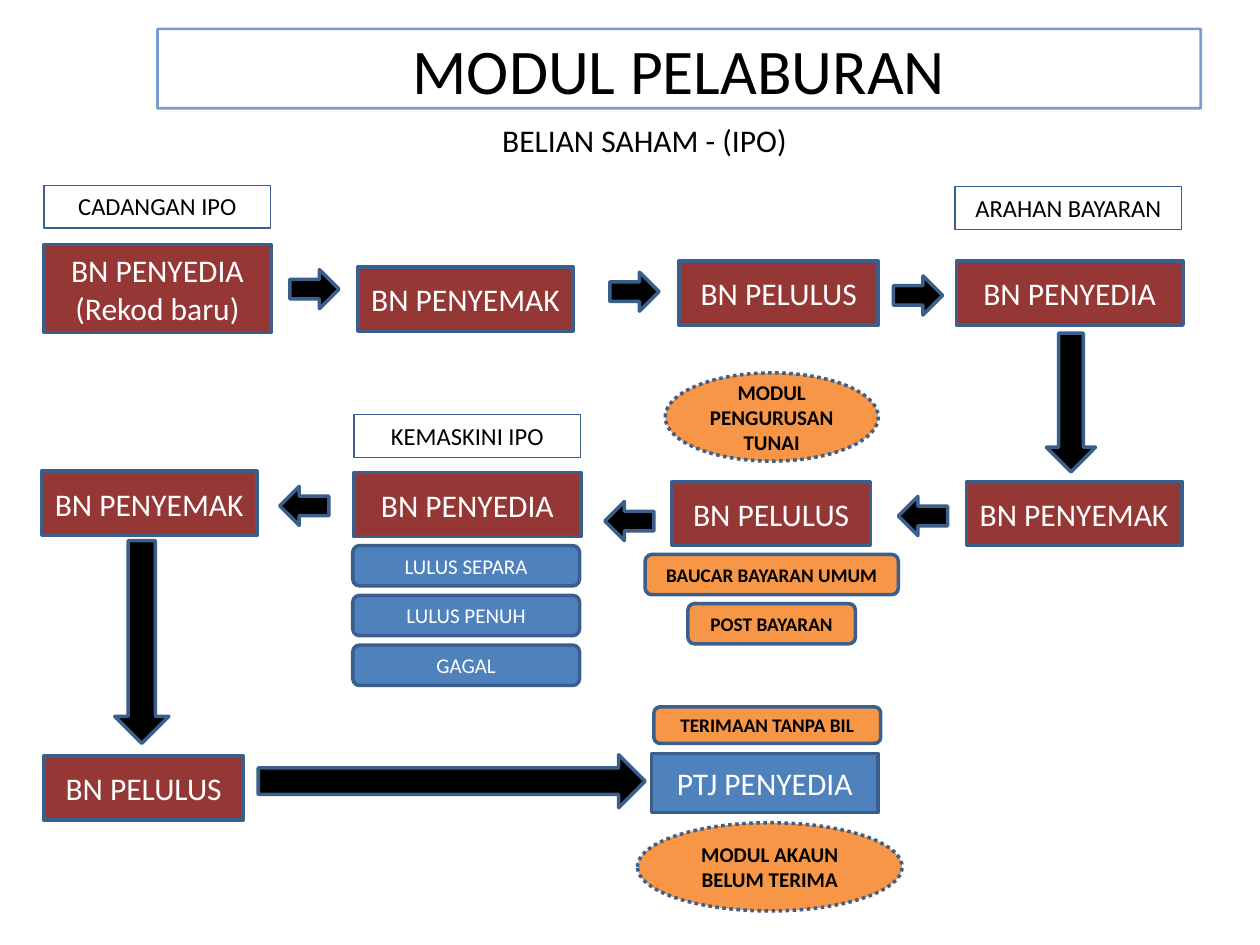
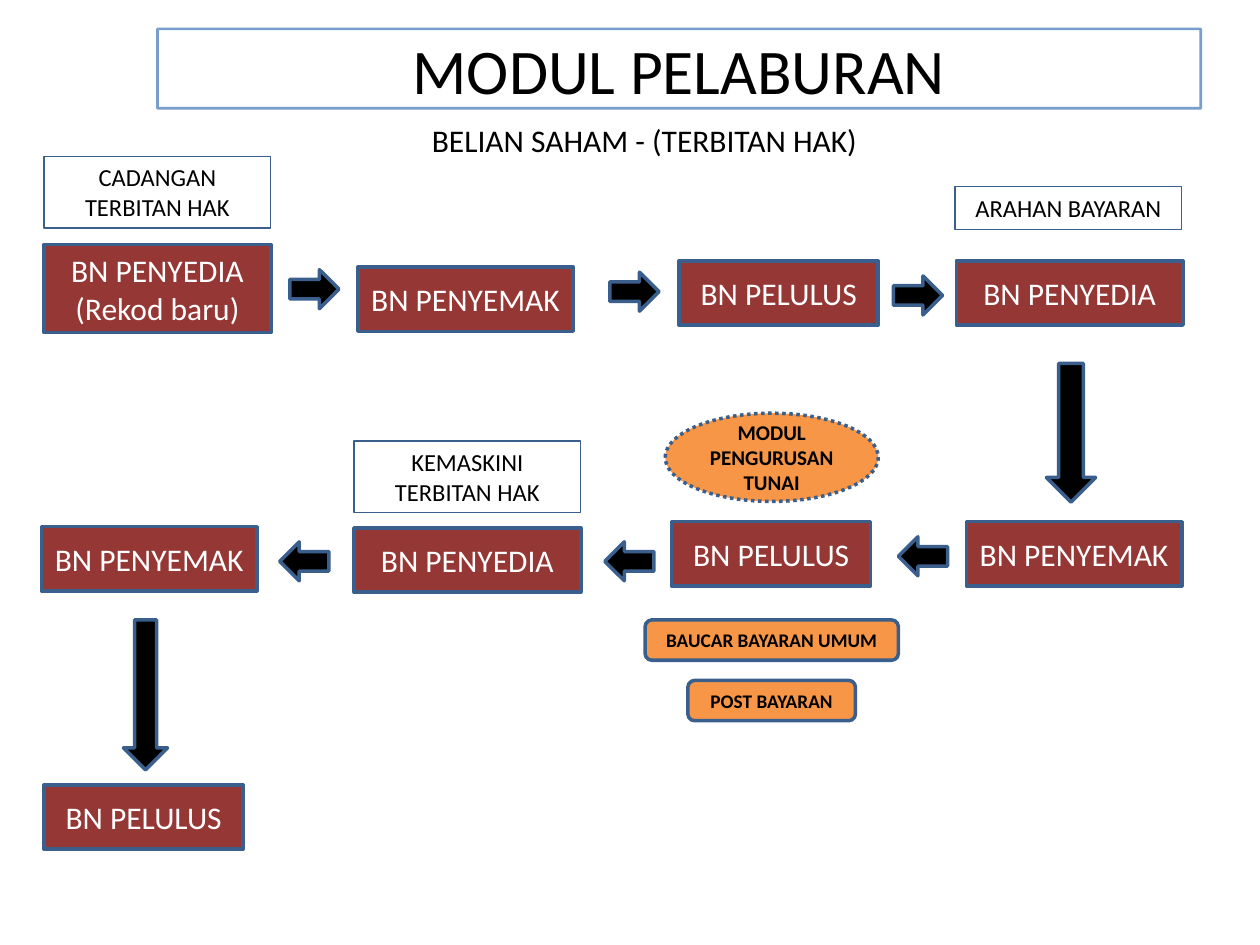
"""Build two flow slides on share purchases in an investment module."""
from dataclasses import dataclass

from lxml import etree
from pptx import Presentation
from pptx.dml.color import RGBColor
from pptx.enum.dml import MSO_LINE
from pptx.enum.shapes import MSO_SHAPE
from pptx.enum.text import MSO_ANCHOR, MSO_AUTO_SIZE, PP_ALIGN
from pptx.oxml.ns import qn
from pptx.util import Inches, Pt

WIDE, HIGH = Inches(10), Inches(7.5)
COL, ROW = WIDE / 100, HIGH / 75
FONT = "Calibri"

BLACK = RGBColor(0x00, 0x00, 0x00)
WHITE = RGBColor(0xFF, 0xFF, 0xFF)
RED = RGBColor(0x95, 0x37, 0x35)
BLUE = RGBColor(0x4F, 0x81, 0xBD)
NAVY = RGBColor(0x3A, 0x5F, 0x8C)
AMBER = RGBColor(0xF7, 0x96, 0x46)

RECT, ROUND = MSO_SHAPE.RECTANGLE, MSO_SHAPE.ROUNDED_RECTANGLE
CARD = MSO_SHAPE.FLOWCHART_ALTERNATE_PROCESS
OVAL, ARROW = MSO_SHAPE.OVAL, MSO_SHAPE.RIGHT_ARROW
DOTS = MSO_LINE.ROUND_DOT
CENTER = PP_ALIGN.CENTER
TOP, MIDDLE = MSO_ANCHOR.TOP, MSO_ANCHOR.MIDDLE
GROW = MSO_AUTO_SIZE.SHAPE_TO_FIT_TEXT

MAKER, CHECKER, PASSER = "BN PENYEDIA", "BN PENYEMAK", "BN PELULUS"
SPAN = {MAKER: 18, CHECKER: 17.1, PASSER: 15.8}
STEP_H, SLIP_H, OVAL_H = 5.1, 3.2, 7
RIGHT, DOWN, LEFT = 0, 90, 180


@dataclass
class Plan:
    """Wording and row positions that differ between the flows."""
    head: str
    topic: str
    lines: int
    drop: float
    pay: float
    fix: float
    slips: tuple
    fall: tuple
    end: float


def place(x, y, w, h):
    """Turn grid columns and rows into slide lengths."""
    return int(x * COL), int(y * ROW), int(w * COL), int(h * ROW)


def write(shape, lines, size, color, bold=False, anchor=MIDDLE):
    """Fill a shape with centred paragraphs."""
    frame = shape.text_frame
    frame.word_wrap = True
    frame.vertical_anchor = anchor
    for i, line in enumerate(lines):
        para = frame.add_paragraph() if i else frame.paragraphs[0]
        para.alignment = CENTER
        run = para.add_run()
        run.text = line
        run.font.name, run.font.size = FONT, Pt(size)
        run.font.bold = bold
        run.font.color.rgb = color


def draw(slide, kind, at, fill=None, edge=NAVY, width=2):
    """Add a flat shape with an outline and an optional fill."""
    shape = slide.shapes.add_shape(kind, *place(*at))
    shape.shadow.inherit = False
    if fill is None:
        shape.fill.background()
    else:
        shape.fill.solid()
        shape.fill.fore_color.rgb = fill
    shape.line.color.rgb = edge
    shape.line.width = Pt(width)
    return shape


def title(slide, head):
    """Add the framed title and the heading below it."""
    box = draw(slide, RECT, (12.5, 2.3, 82.8, 6.3), edge=BLUE, width=1.5)
    tint = box.line.color._xFill.find(qn("a:srgbClr"))
    etree.SubElement(tint, qn("a:alpha")).set("val", "76000")
    write(box, ["MODUL PELABURAN"], 36.3, BLACK)
    text = slide.shapes.add_textbox(*place(24.2, 9.1, 53.9, 4))
    write(text, [head], 18, BLACK, anchor=TOP)
    text.text_frame.auto_size = GROW


def label(slide, x, base, text, lines=1):
    """Add an outlined stage label that rests on a base row."""
    tall = 1.1 + 2.3 * lines
    box = draw(slide, RECT, (x, base - tall, 18, tall), width=0.75)
    write(box, [text], 14, BLACK, anchor=TOP)
    box.text_frame.auto_size = GROW


def step(slide, x, y, role, note=None):
    """Add a red step box, taller when it holds a note."""
    tall = 7 if note else STEP_H
    box = draw(slide, RECT, (x, y, SPAN[role], tall), RED)
    write(box, [role, note] if note else [role], 18, WHITE)


def slip(slide, x, y, w, text, h=SLIP_H):
    """Add an amber document slip."""
    write(draw(slide, ROUND, (x, y, w, h), AMBER), [text], 11, BLACK, True)


def module(slide, x, y, w, text):
    """Add a dotted oval for a linked module."""
    oval = draw(slide, OVAL, (x, y, w, OVAL_H), AMBER)
    oval.line.dash_style = DOTS
    write(oval, [text], 12, BLACK, True)


def arrow(slide, x, y, turn=RIGHT, w=3.9, h=3.1):
    """Add a black block arrow, turned about its centre."""
    draw(slide, ARROW, (x, y, w, h), BLACK).rotation = turn


def flow(deck, plan):
    """Add a slide with the shared flow and return it."""
    slide = deck.slides.add_slide(deck.slide_layouts[6])
    title(slide, plan.head)
    pay, fix = plan.pay, plan.fix

    label(slide, 3.5, 18.1, "CADANGAN " + plan.topic, plan.lines)
    label(slide, 75.8, 18.2, "ARAHAN BAYARAN")
    step(slide, 3.5, 19.4, MAKER, "(Rekod baru)")
    for x, y, role in ((28.4, 21.2, CHECKER), (53.9, 20.7, PASSER),
                       (75.9, 20.7, MAKER)):
        step(slide, x, y, role)
    for x, y in ((23, 21.4), (48.4, 21.6), (70.9, 21.9)):
        arrow(slide, x, y)
    arrow(slide, 79.5, plan.drop, DOWN, 11, 3.9)

    module(slide, 52.8, pay - 8.6, 16.9, "MODUL PENGURUSAN TUNAI")
    step(slide, 76.7, pay, CHECKER)
    step(slide, 53.3, pay, PASSER)
    first, last = plan.slips
    slip(slide, 51.2, first, 20.1, "BAUCAR BAYARAN UMUM")
    slip(slide, 54.6, last, 13.3, "POST BAYARAN")

    label(slide, 28.1, fix - 1.2, "KEMASKINI " + plan.topic, plan.lines)
    step(slide, 28.1, fix, MAKER)
    step(slide, 3.3, fix - 0.1, CHECKER)
    for x, y in ((71.3, pay + 1.2), (48, pay + 1.6), (22.2, fix + 1.1)):
        arrow(slide, x, y, LEFT)
    x, y, w, h = plan.fall
    arrow(slide, x, y, DOWN, w, h)
    step(slide, 3.5, plan.end, PASSER)
    return slide


def result(slide):
    """Add the outcomes and the receipt branch."""
    for i, text in enumerate(("LULUS SEPARA", "LULUS PENUH", "GAGAL")):
        card = draw(slide, CARD, (28, 43.3 + 3.95 * i, 18, SLIP_H), BLUE)
        write(card, [text], 12, WHITE)
    arrow(slide, 20.5, 59.9, w=30.7, h=4.2)
    slip(slide, 51.9, 56.1, 18, "TERIMAAN TANPA BIL", 2.9)
    box = draw(slide, RECT, (51.7, 59.8, 18, 4.7), BLUE)
    write(box, ["PTJ PENYEDIA"], 18, WHITE)
    module(slide, 50.6, 65.3, 21, "MODUL AKAUN BELUM TERIMA")


def main():
    """Build and save the deck."""
    deck = Presentation()
    deck.slide_width, deck.slide_height = WIDE, HIGH
    offer = Plan("BELIAN SAHAM - (IPO)", "IPO", 1, drop=30, pay=38.2,
                 fix=37.5, slips=(44, 47.9), fall=(3.2, 48.8, 16.1, 4.3),
                 end=60)
    rights = Plan("BELIAN SAHAM - (TERBITAN HAK)", "TERBITAN HAK", 2,
                  drop=32.4, pay=41.4, fix=41.9, slips=(49.2, 54),
                  fall=(5.6, 53.4, 11.9, 3.5), end=62.3)
    result(flow(deck, offer))
    flow(deck, rights)
    deck.save("out.pptx")


if __name__ == "__main__":
    main()
